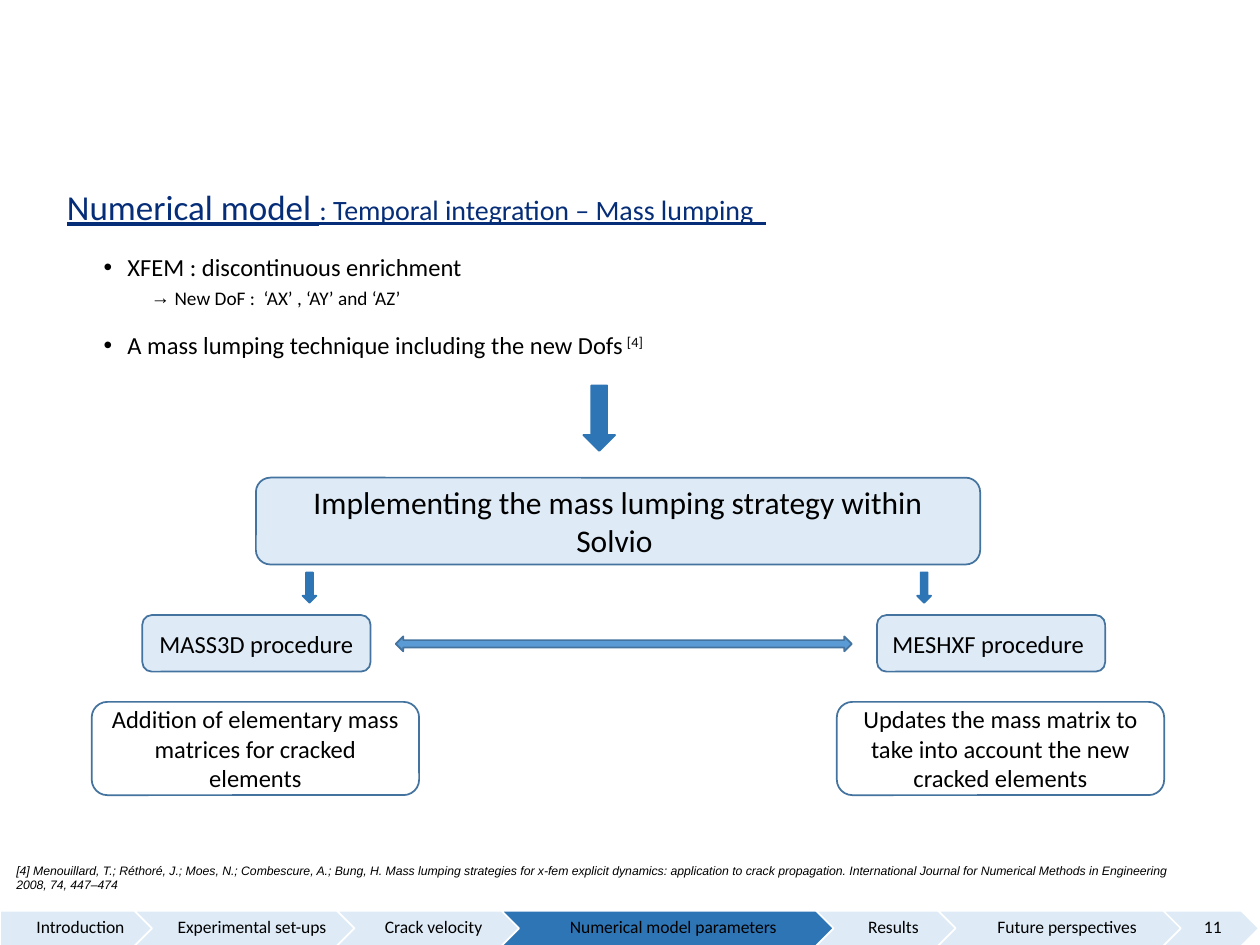
import pptx
import pptx.dml.color
import pptx.enum.shapes
import pptx.enum.text
import pptx.oxml.ns
import pptx.util
from lxml import etree

Cm = pptx.util.Cm
Pt = pptx.util.Pt
SHAPE = pptx.enum.shapes.MSO_SHAPE
ALIGN = pptx.enum.text.PP_ALIGN
MIDDLE = pptx.enum.text.MSO_ANCHOR.MIDDLE

BLACK = "000000"
WHITE = "FFFFFF"
NAVY = "062D78"
PALE_BLUE = "DEEBF7"
STRONG_BLUE = "2E75B6"
MEDIUM_BLUE = "5B9BD5"
OUTLINE_BLUE = "43739E"

NAVIGATION = [
    ("Introduction", 3.3),
    ("Experimental set-ups", 4.67),
    ("Crack velocity ", 3.91),
    ("Numerical model parameters ", 6.93),
    ("Results", 3.05),
    ("Future perspectives", 5.13),
    ("11", 1.93),
]
CURRENT_SECTION = 3
NAVIGATION_OVERLAP = 0.59

REFERENCE = (
    "[4] Menouillard, T.; Réthoré, J.; Moes, N.; Combescure, A.; Bung, H. "
    "Mass lumping strategies for x-fem explicit dynamics: application to crack propagation. "
    "International Journal for Numerical Methods in Engineering 2008, 74, 447–474"
)


def color(hex_string):
    return pptx.dml.color.RGBColor.from_string(hex_string)


def format_run(run, size, hex_string=BLACK, name="Calibri"):
    run.font.size = Pt(size)
    run.font.name = name
    run.font.color.rgb = color(hex_string)


def add_run(paragraph, text, size, hex_string=BLACK, name="Calibri"):
    run = paragraph.add_run()
    run.text = text
    format_run(run, size, hex_string, name)
    return run


def add_text_box(slide, left, top, width, height):
    box = slide.shapes.add_textbox(Cm(left), Cm(top), Cm(width), Cm(height))
    box.text_frame.word_wrap = True
    return box.text_frame


def format_outline(paragraph, level, margin, indent=0, bullet=None):
    paragraph.level = level
    paragraph.alignment = ALIGN.JUSTIFY
    paragraph.line_spacing = 0.9
    properties = paragraph._p.get_or_add_pPr()
    properties.set("marL", str(Cm(margin)))
    properties.set("indent", str(Cm(indent)))
    if bullet:
        font = etree.SubElement(properties, pptx.oxml.ns.qn("a:buFont"))
        font.set("typeface", "Arial")
        character = etree.SubElement(properties, pptx.oxml.ns.qn("a:buChar"))
        character.set("char", bullet)


def add_shape(slide, kind, left, top, width, height, fill, line):
    shape = slide.shapes.add_shape(kind, Cm(left), Cm(top), Cm(width), Cm(height))
    shape.shadow.inherit = False
    if fill:
        shape.fill.solid()
        shape.fill.fore_color.rgb = color(fill)
    else:
        shape.fill.background()
    shape.line.color.rgb = color(line)
    shape.line.width = Pt(1)
    return shape


def set_label(shape, text, size):
    frame = shape.text_frame
    frame.word_wrap = True
    frame.vertical_anchor = MIDDLE
    frame.text = text
    paragraph = frame.paragraphs[0]
    paragraph.alignment = ALIGN.CENTER
    format_run(paragraph.runs[0], size)
    return paragraph


def add_box(slide, text, left, top, width, height, size=14, fill=PALE_BLUE):
    shape = add_shape(slide, SHAPE.ROUNDED_RECTANGLE, left, top, width, height, fill, OUTLINE_BLUE)
    set_label(shape, text, size)


def add_down_arrow(slide, left, top, width, height):
    add_shape(slide, SHAPE.DOWN_ARROW, left, top, width, height, STRONG_BLUE, STRONG_BLUE)


def add_title(slide):
    paragraph = add_text_box(slide, 0.13, 3.71, 20.9, 1.45).paragraphs[0]
    format_outline(paragraph, 1, 0.97)
    for text, size in (
        ("Numerical model ", 20),
        (": Temporal integration – Mass lumping  ", 16),
    ):
        add_run(paragraph, text, size, NAVY).font.underline = True


def add_bullets(slide):
    frame = add_text_box(slide, 0.89, 5.03, 20.78, 1.22)
    enrichment = frame.paragraphs[0]
    format_outline(enrichment, 1, 1.43, -0.48, "•")
    add_run(enrichment, "XFEM : discontinuous enrichment ", 14)
    freedom = frame.add_paragraph()
    freedom.space_before = Pt(3.8)
    format_outline(freedom, 2, 2.38, -0.48, "→")
    add_run(freedom, "New DoF :  ‘AX’ , ‘AY’ and ‘AZ’ ", 11)

    technique = add_text_box(slide, 0.89, 6.6, 20.78, 0.81).paragraphs[0]
    format_outline(technique, 1, 1.43, -0.48, "•")
    add_run(technique, "A mass lumping technique including the new Dofs", 14)
    citation = add_run(technique, " [4]", 14)
    citation.font._element.set("baseline", "30000")


def add_reference(slide):
    paragraph = add_text_box(slide, 0.08, 17.27, 23.98, 0.86).paragraphs[0]
    add_run(paragraph, REFERENCE, 7, name="Arial").font.italic = True


def add_navigation(slide):
    left = 0
    for index, (text, width) in enumerate(NAVIGATION):
        kind = SHAPE.CHEVRON if index else SHAPE.PENTAGON
        fill = STRONG_BLUE if index == CURRENT_SECTION else PALE_BLUE
        step = add_shape(slide, kind, left, 18.36, width, 0.71, fill, WHITE)
        set_label(step, text, 10).line_spacing = 0.9
        frame = step.text_frame
        frame.margin_left = Cm(0.1 if index else 0.15)
        frame.margin_right = Cm(0.03)
        frame.margin_top = frame.margin_bottom = Cm(0.08)
        left += width - NAVIGATION_OVERLAP


def add_diagram(slide):
    add_box(slide, "MASS3D procedure ", 2.87, 12.4, 4.6, 1.14)
    add_box(slide, "MESHXF procedure ", 17.68, 12.4, 4.6, 1.14)
    for left in (6.1, 18.49):
        add_down_arrow(slide, left, 11.54, 0.28, 0.61)
    add_shape(slide, SHAPE.LEFT_RIGHT_ARROW, 7.98, 12.83, 9.19, 0.3, MEDIUM_BLUE, OUTLINE_BLUE)
    add_box(slide, "Addition of elementary mass matrices for cracked elements",
            1.85, 14.15, 6.6, 1.88, fill=None)
    add_box(slide, "Updates the mass matrix to take into account the new cracked elements",
            16.87, 14.15, 6.6, 1.88, fill=None)
    add_box(slide, "Implementing the mass lumping strategy within Solvio ",
            5.16, 9.63, 14.6, 1.75, size=18)
    add_down_arrow(slide, 11.76, 7.77, 0.64, 1.32)


def main():
    presentation = pptx.Presentation()
    presentation.slide_width = Cm(25.4)
    presentation.slide_height = Cm(19.05)
    slide = presentation.slides.add_slide(presentation.slide_layouts[6])
    add_title(slide)
    add_bullets(slide)
    add_reference(slide)
    add_navigation(slide)
    add_diagram(slide)
    presentation.save("out.pptx")


if __name__ == "__main__":
    main()
